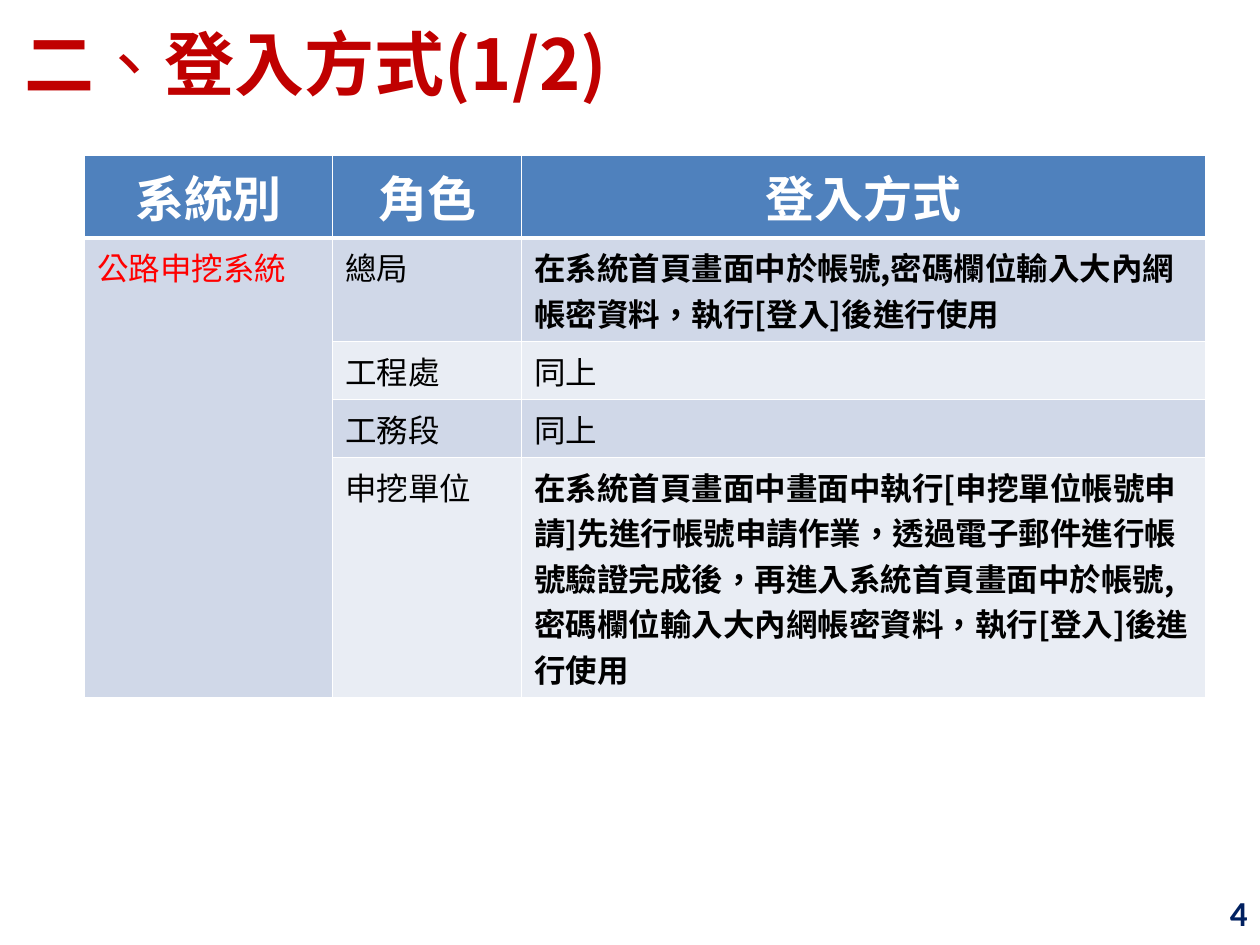
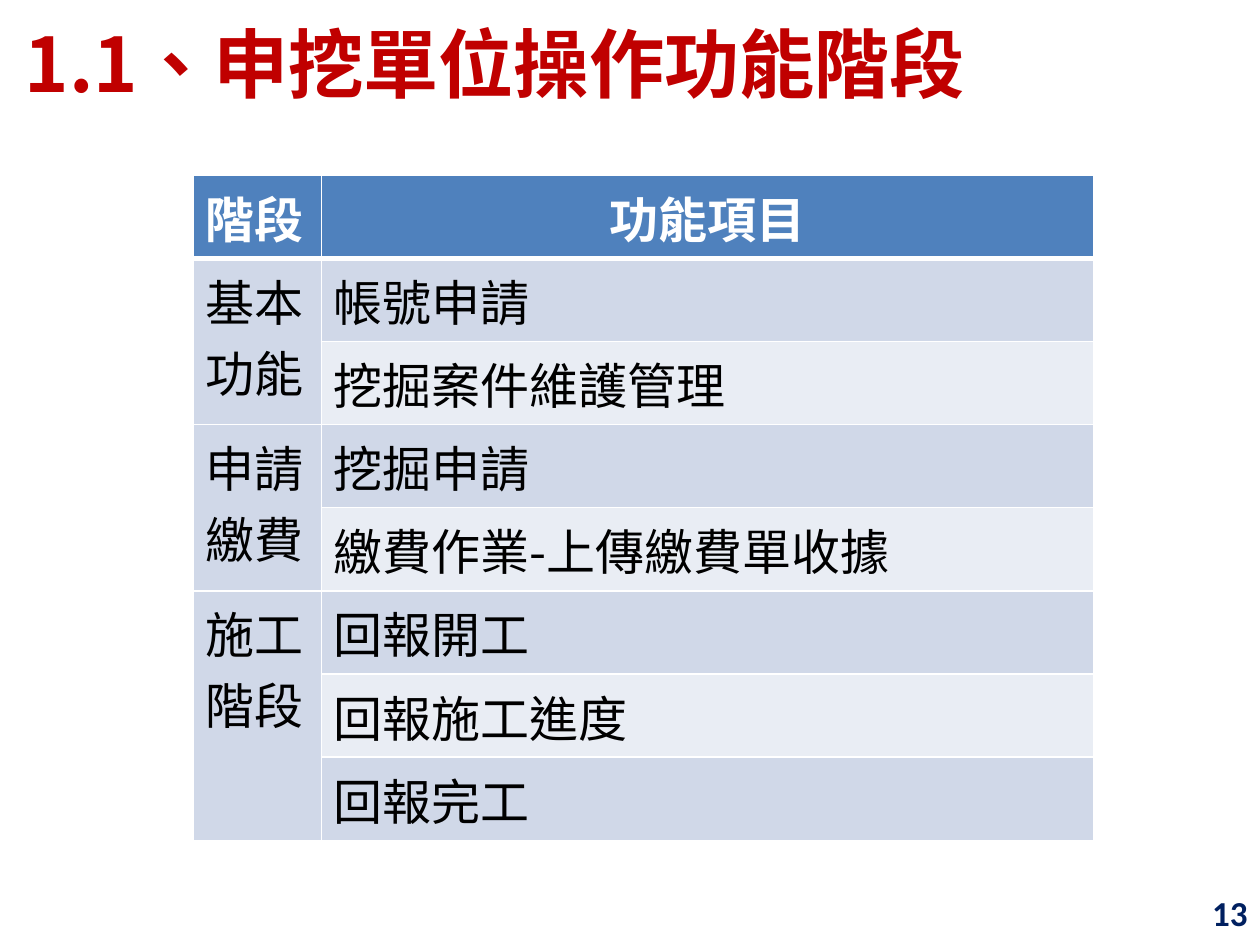
from lxml.etree import SubElement
from pptx import Presentation
from pptx.dml.color import RGBColor
from pptx.enum.text import MSO_ANCHOR as Anchor, PP_ALIGN as Align
from pptx.oxml.ns import qn
from pptx.util import Inches, Pt

COLORS = {
    "title": "C00000", "page": "002060", "header": "4F81BD", "white": "FFFFFF",
    "odd": "D0D8E8", "even": "E9EDF4", "text": "000000", "accent": "FF0000",
}
CJK, CJK_MARK, LATIN = "Noto Sans CJK SC", "Noto Sans CJK JP", "Calibri"
TITLE_BOX = (0.1, 0.05, 9, 0.89)
PAGE_BOX = (7.67, 6.98, 2.33, 0.52)


def rgb(name):
    return RGBColor.from_string(COLORS[name])


def add_run(paragraph, text, size, color, bold=False, face=CJK):
    run = paragraph.add_run()
    run.text = text
    font = run.font
    font.size, font.bold, font.name = Pt(size), bold, face
    font.color.rgb = rgb(color)
    # East Asian face and locale
    props = run._r.get_or_add_rPr()
    props.set("lang", "zh-TW")
    SubElement(props, qn("a:ea")).set("typeface", face)


def add_line(slide, box, align):
    """Add a one-line text box and return its paragraph."""
    frame = slide.shapes.add_textbox(*map(Inches, box)).text_frame
    frame.word_wrap = True
    frame.vertical_anchor = Anchor.MIDDLE
    frame.paragraphs[0].alignment = align
    return frame.paragraphs[0]


def add_title(slide, parts, size):
    title = add_line(slide, TITLE_BOX, Align.LEFT)
    for text, bold, face in parts:
        add_run(title, text, size, "title", bold, face)


def add_page_number(slide, number):
    page = add_line(slide, PAGE_BOX, Align.RIGHT)
    add_run(page, str(number), 20, "page", True, LATIN)


def set_borders(cell, top=1, bottom=1):
    props = cell._tc.get_or_add_tcPr()
    for side, width in (("L", 1), ("R", 1), ("T", top), ("B", bottom)):
        line = SubElement(props, qn(f"a:ln{side}"), w=str(Pt(width)))
        fill = SubElement(line, qn("a:solidFill"))
        SubElement(fill, qn("a:srgbClr")).set("val", COLORS["white"])


def add_grid(slide, left, top, widths, heights, rows, body_size,
             bold_texts=(), accent_texts=(), left_headers=()):
    """Add a banded table; None continues the cell above it."""
    table = slide.shapes.add_table(
        len(rows), len(widths), Inches(left), Inches(top),
        Inches(sum(widths)), Inches(sum(heights))).table
    for column, width in zip(table.columns, widths):
        column.width = Inches(width)
    for row, height in zip(table.rows, heights):
        row.height = Inches(height)

    for r, texts in enumerate(rows):
        is_header = r == 0
        band = "header" if is_header else "odd" if r % 2 else "even"
        for c, text in enumerate(texts):
            cell = table.cell(r, c)
            set_borders(cell, top=3 if r == 1 else 1, bottom=3 if is_header else 1)
            cell.fill.solid()
            cell.fill.fore_color.rgb = rgb(band)
            if text is None:
                continue
            paragraph = cell.text_frame.paragraphs[0]
            if is_header:
                paragraph.alignment = Align.LEFT if text in left_headers else Align.CENTER
                add_run(paragraph, text, 28, "white", True)
            else:
                color = "accent" if text in accent_texts else "text"
                add_run(paragraph, text, body_size, color, text in bold_texts)

    # Merge the first column over its continued rows
    starts = [r for r, texts in enumerate(rows) if texts[0] is not None]
    for first, following in zip(starts, starts[1:] + [len(rows)]):
        if following - first > 1:
            table.cell(first, 0).merge(table.cell(following - 1, 0))


def build_login_slide(slide):
    add_title(slide, [("二", True, CJK), ("、", False, CJK_MARK),
                      ("登入方式(1/2)", True, CJK)], 40)
    staff_login = "在系統首頁畫面中於帳號,密碼欄位輸入大內網帳密資料，執行[登入]後進行使用"
    applicant_login = (
        "在系統首頁畫面中畫面中執行[申挖單位帳號申請]先進行帳號申請作業，"
        "透過電子郵件進行帳號驗證完成後，再進入系統首頁畫面中於帳號,"
        "密碼欄位輸入大內網帳密資料，執行[登入]後進行使用")
    system = "公路申挖系統"
    rows = [
        ("系統別", "角色", "登入方式"),
        (system, "總局", staff_login),
        (None, "工程處", "同上"),
        (None, "工務段", "同上"),
        (None, "申挖單位", applicant_login),
    ]
    add_grid(slide, 0.67, 1.23, (1.97, 1.5, 5.43), (0.66, 0.82, 0.46, 0.46, 1.91),
             rows, 18, bold_texts=(staff_login, applicant_login), accent_texts=(system,))
    add_page_number(slide, 4)


def build_stages_slide(slide):
    add_title(slide, [("1.1、申挖單位操作功能階段", True, CJK)], 43)
    stages = {
        "基本功能": ("帳號申請", "挖掘案件維護管理"),
        "申請繳費": ("挖掘申請", "繳費作業-上傳繳費單收據"),
        "施工階段": ("回報開工", "回報施工進度", "回報完工"),
    }
    rows = [("階段", "功能項目")]
    for stage, features in stages.items():
        rows += [(None if i else stage, feature) for i, feature in enumerate(features)]
    add_grid(slide, 1.53, 1.39, (1.02, 6.13), [0.66] * len(rows), rows, 28,
             left_headers=("階段",))
    add_page_number(slide, 13)


def main():
    deck = Presentation()
    deck.slide_width, deck.slide_height = Inches(10), Inches(7.5)
    for build in (build_login_slide, build_stages_slide):
        build(deck.slides.add_slide(deck.slide_layouts[6]))
    deck.save("out.pptx")


if __name__ == "__main__":
    main()
